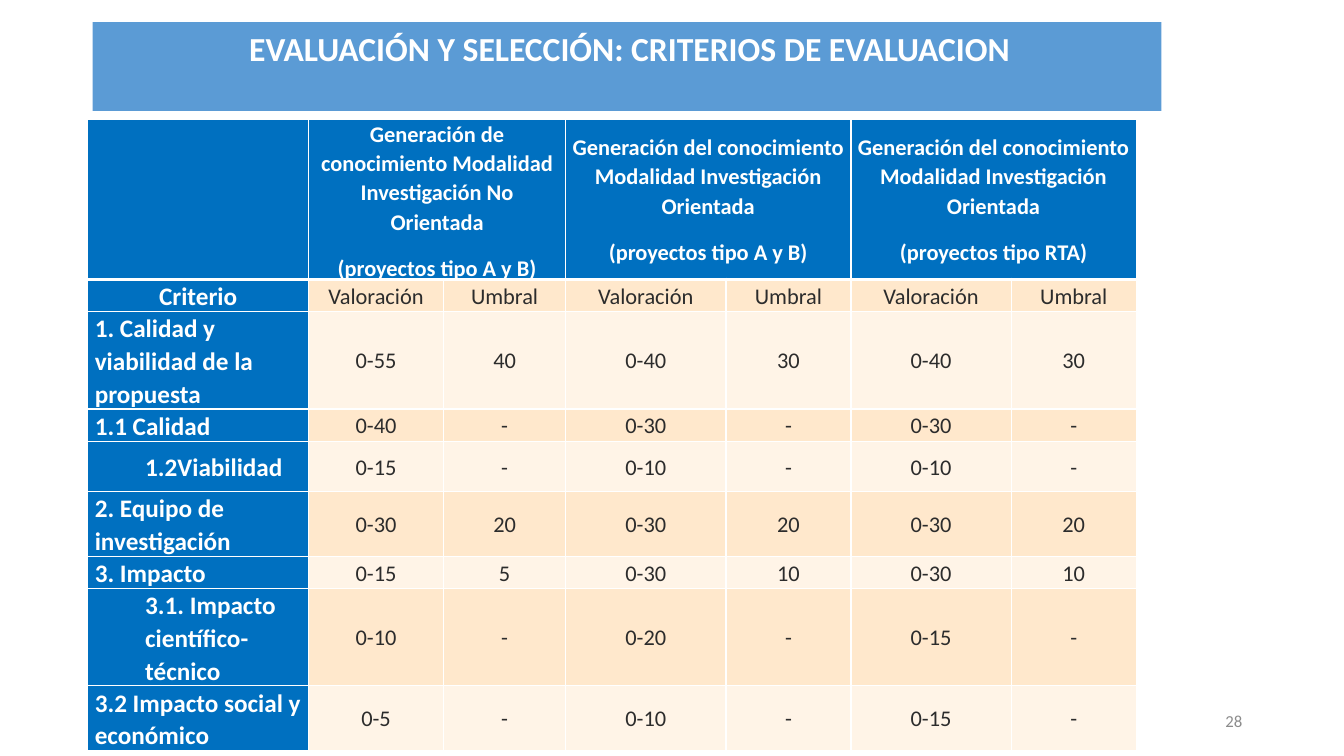
from lxml.etree import SubElement
from pptx import Presentation
from pptx.dml.color import RGBColor
from pptx.enum.shapes import MSO_SHAPE
from pptx.enum.text import MSO_ANCHOR, PP_ALIGN
from pptx.oxml.ns import qn
from pptx.util import Inches, Pt

WHITE = RGBColor(0xFF, 0xFF, 0xFF)
BANNER_BLUE = RGBColor(0x5B, 0x9B, 0xD5)
HEADER_BLUE = RGBColor(0x00, 0x70, 0xC0)
DARK_BAND = RGBColor(0xFF, 0xE8, 0xCC)
LIGHT_BAND = RGBColor(0xFF, 0xF4, 0xE7)
BODY_TEXT = RGBColor(0x2C, 0x2C, 0x2C)
PAGE_GREY = RGBColor(0x8C, 0x8C, 0x8C)

# Widths and heights are counted in grid columns and rows, 100 each way.
COLUMN_WIDTHS = [16.43, 10.05, 9.08, 11.93, 9.3, 11.93, 9.3]
ROW_HEIGHTS = [18.67, 3.6, 11.2, 3.6, 6.67, 7.47, 3.6, 11.2, 7.47]

MODALITIES = [
    "Generación de conocimiento Modalidad Investigación No Orientada\n(proyectos tipo A y B)",
    "Generación del conocimiento Modalidad Investigación Orientada\n(proyectos tipo A y B)",
    "Generación del conocimiento Modalidad Investigación Orientada\n(proyectos tipo RTA)",
]
CRITERIA = [
    ["Criterio"] + ["Valoración", "Umbral"] * 3,
    ["1. Calidad y viabilidad de la propuesta", "0-55", "40", "0-40", "30", "0-40", "30"],
    ["1.1 Calidad", "0-40", "-", "0-30", "-", "0-30", "-"],
    ["1.2Viabilidad", "0-15", "-", "0-10", "-", "0-10", "-"],
    ["2. Equipo de investigación", "0-30", "20", "0-30", "20", "0-30", "20"],
    ["3. Impacto", "0-15", "5", "0-30", "10", "0-30", "10"],
    ["3.1. Impacto científico-técnico", "0-10", "-", "0-20", "-", "0-15", "-"],
    ["3.2 Impacto social y económico", "0-5", "-", "0-10", "-", "0-15", "-"],
]
INDENTED = {"1.2Viabilidad", "3.1. Impacto científico-técnico"}


class SlideBuilder:
    """Holds the style, the current slide and its grid of 100 columns by 100 rows."""

    font_name = "Calibri"
    cell_margin = Inches(0.07)

    def __init__(self, deck):
        self.slide = deck.slides.add_slide(deck.slide_layouts[6])
        self.column = deck.slide_width / 100
        self.row = deck.slide_height / 100

    def place(self, left, top, width, height):
        return (int(left * self.column), int(top * self.row),
                int(width * self.column), int(height * self.row))

    def style(self, para, size, color, bold, align):
        para.alignment = align
        for span in para.runs:
            span.font.name = self.font_name
            span.font.size = Pt(size)
            span.font.bold = bold
            span.font.color.rgb = color

    def banner(self, *area):
        box = self.slide.shapes.add_shape(MSO_SHAPE.RECTANGLE, *self.place(*area))
        box.shadow.inherit = False
        box.fill.solid()
        box.fill.fore_color.rgb = BANNER_BLUE
        box.line.fill.background()

    def text(self, content, *area, size, color, bold=False,
             align=PP_ALIGN.CENTER, anchor=MSO_ANCHOR.TOP):
        frame = self.slide.shapes.add_textbox(*self.place(*area)).text_frame
        frame.word_wrap = True
        frame.vertical_anchor = anchor
        frame.text = content
        self.style(frame.paragraphs[0], size, color, bold, align)

    def table(self, left, top, widths, heights):
        area = self.place(left, top, sum(widths), sum(heights))
        table = self.slide.shapes.add_table(len(heights), len(widths), *area).table
        table.first_row = table.horz_banding = False
        for column, width in zip(table.columns, widths):
            column.width = int(width * self.column)
        for row, height in zip(table.rows, heights):
            row.height = int(height * self.row)
        return table

    def borders(self, cell, top, bottom):
        """Draw white cell borders; top and bottom are widths in points."""
        properties = cell._tc.get_or_add_tcPr()
        for side, width in (("L", 1), ("R", 1), ("T", top), ("B", bottom)):
            line = SubElement(properties, qn(f"a:ln{side}"), w=str(Pt(width)))
            fill = SubElement(line, qn("a:solidFill"))
            SubElement(fill, qn("a:srgbClr"), val=str(WHITE))

    def cell(self, cell, content, fill, size, color, bold, align=PP_ALIGN.CENTER):
        cell.fill.solid()
        cell.fill.fore_color.rgb = fill
        cell.vertical_anchor = MSO_ANCHOR.MIDDLE
        cell.margin_left = cell.margin_right = self.cell_margin
        cell.margin_top = cell.margin_bottom = 0
        cell.text_frame.text = content
        for index, para in enumerate(cell.text_frame.paragraphs):
            para.line_spacing = 1.07
            para.space_before = Pt(6 if index else 0)
            para.space_after = Pt(6)
            if content in INDENTED:
                para._p.get_or_add_pPr().set("marL", str(Inches(0.5)))
            self.style(para, size, color, bold, align)


def add_criteria_table(page):
    table = page.table(6.53, 15.73, COLUMN_WIDTHS, ROW_HEIGHTS)
    for row_index in range(len(ROW_HEIGHTS)):
        for column_index in range(len(COLUMN_WIDTHS)):
            page.borders(table.cell(row_index, column_index),
                         top=3 if row_index == 1 else 1,
                         bottom=3 if row_index == 0 else 1)

    page.cell(table.cell(0, 0), "", HEADER_BLUE, 16, WHITE, True)
    for index, modality in enumerate(MODALITIES):
        first = 1 + 2 * index
        table.cell(0, first).merge(table.cell(0, first + 1))
        page.cell(table.cell(0, first), modality, HEADER_BLUE, 16, WHITE, True)

    for row_index, (criterion, *values) in enumerate(CRITERIA, start=1):
        align = PP_ALIGN.CENTER if row_index == 1 else PP_ALIGN.LEFT
        page.cell(table.cell(row_index, 0), criterion, HEADER_BLUE, 18, WHITE, True, align)
        band = DARK_BAND if row_index % 2 else LIGHT_BAND
        for column_index, value in enumerate(values, start=1):
            page.cell(table.cell(row_index, column_index), value, band, 16, BODY_TEXT, False)


def main():
    deck = Presentation()
    deck.slide_width, deck.slide_height = Inches(13.33), Inches(7.5)
    page = SlideBuilder(deck)
    page.banner(6.9, 2.93, 79.52, 11.73)
    page.text("28", 70.67, 92.67, 22.5, 5.33, size=12, color=PAGE_GREY,
              align=PP_ALIGN.RIGHT, anchor=MSO_ANCHOR.MIDDLE)
    page.text("EVALUACIÓN Y SELECCIÓN: CRITERIOS DE EVALUACION",
              7.35, 3.07, 79, 6.67, size=24, color=WHITE, bold=True)
    add_criteria_table(page)
    deck.save("out.pptx")


if __name__ == "__main__":
    main()
